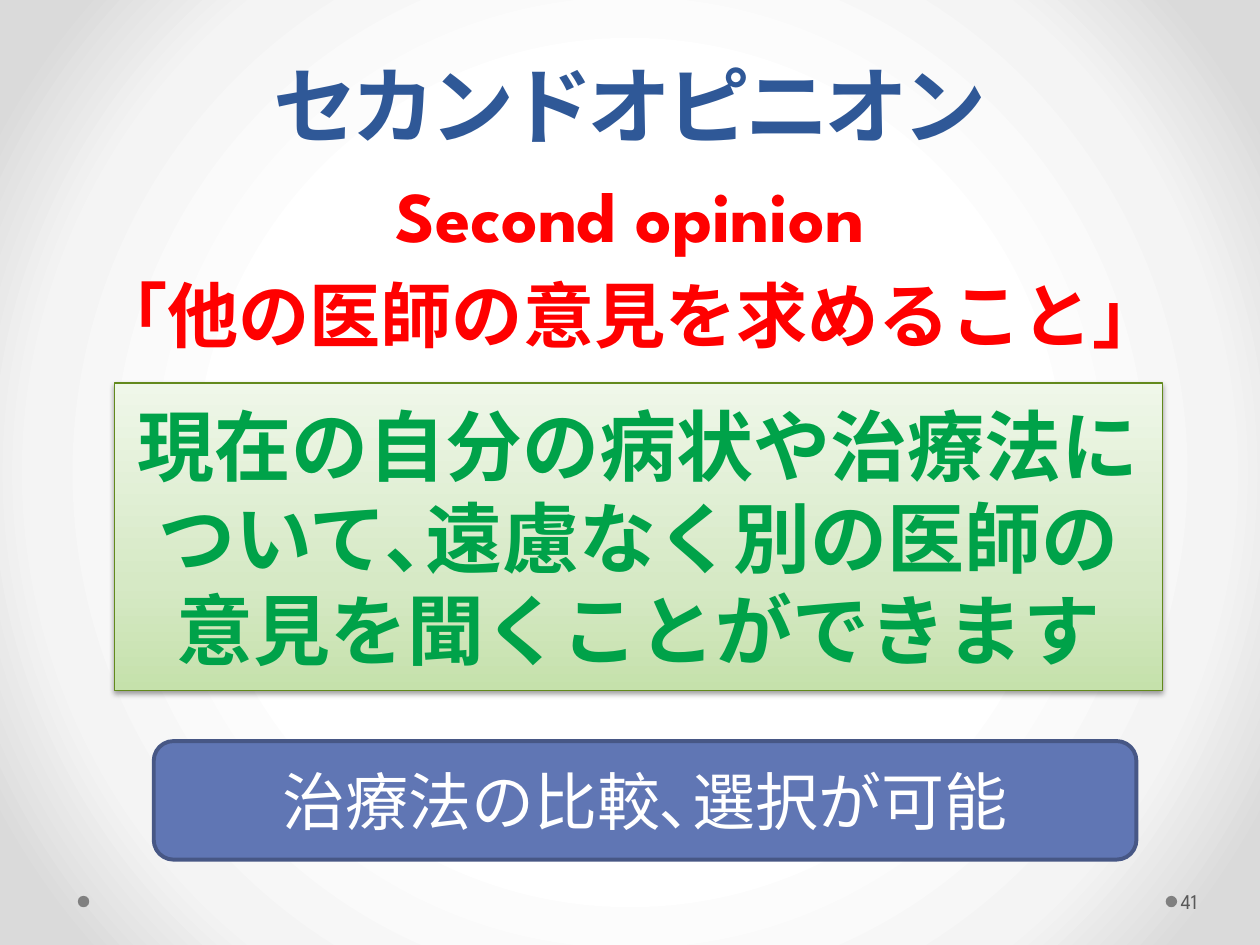
import pptx
import pptx.util
import pptx.dml.color
import pptx.enum.shapes
import pptx.enum.text
import pptx.oxml
import pptx.oxml.ns

Cm, Pt = pptx.util.Cm, pptx.util.Pt
SHAPES = pptx.enum.shapes.MSO_SHAPE
CENTER = pptx.enum.text.PP_ALIGN.CENTER
MIDDLE = pptx.enum.text.MSO_ANCHOR.MIDDLE
NS = pptx.oxml.ns.nsdecls("a")


def rgb(value):
    return pptx.dml.color.RGBColor.from_string(value)


def set_gradient(fill, properties, stops, direction):
    """Fill with (percent, colour) stops, spread as the direction XML says."""
    fill.gradient()
    gradient = properties.find(".//" + pptx.oxml.ns.qn("a:gradFill"))
    for child in list(gradient):
        gradient.remove(child)
    stop_xml = "".join(
        f'<a:gs pos="{percent * 1000}"><a:srgbClr val="{color}"/></a:gs>'
        for percent, color in stops)
    for xml in (f"<a:gsLst {NS}>{stop_xml}</a:gsLst>", direction):
        gradient.append(pptx.oxml.parse_xml(xml))


class SlideBuilder:
    latin = "League Spartan"
    japanese = "Vollkorn"

    def __init__(self, deck):
        self.slide = deck.slides.add_slide(deck.slide_layouts[1])

    def background(self, stops):
        circle = (f'<a:path {NS} path="circle"><a:fillToRect l="50000" t="50000" '
                  'r="50000" b="50000"/></a:path>')
        background = self.slide.background
        set_gradient(background.fill, self.slide.element, stops, circle)

    def place(self, shape, left, top, width, height):
        shape.left, shape.top = Cm(left), Cm(top)
        shape.width, shape.height = Cm(width), Cm(height)

    def set_text(self, shape, text, size, color, font, bold=False, align=CENTER):
        frame = shape.text_frame
        frame.word_wrap = True
        frame.auto_size = pptx.enum.text.MSO_AUTO_SIZE.NONE
        frame.text = text
        for paragraph in frame.paragraphs:
            paragraph.alignment = align
            for run in paragraph.runs:
                run.font.size, run.font.name, run.font.bold = Pt(size), font, bold
                run.font.color.rgb = rgb(color)
        return frame

    def title(self, box, text):
        heading = self.slide.shapes.title
        self.place(heading, *box)
        frame = self.set_text(heading, text, 48, "2F5897", self.japanese, bold=True)
        frame.vertical_anchor = MIDDLE
        paragraph = frame.paragraphs[0]
        paragraph.line_spacing = Pt(58)
        paragraph.runs[0]._r.get_or_add_rPr().set("spc", "-300")

    def body(self, box, lines):
        definition = self.slide.placeholders[1]
        self.place(definition, *box)
        frame = self.set_text(definition, "\n".join(lines), 40.7, "FF0000",
                              self.latin, bold=True)
        for paragraph in frame.paragraphs:
            paragraph.space_before = Pt(8)
            properties = paragraph._p.get_or_add_pPr()
            properties.set("marL", "0")
            properties.set("indent", "0")
            properties.append(pptx.oxml.parse_xml(f"<a:buNone {NS}/>"))

    def shape(self, kind, box, fill=None, line=None, line_width=0):
        shape = self.slide.shapes.add_shape(kind, *map(Cm, box))
        shape.shadow.inherit = False
        if fill:
            shape.fill.solid()
            shape.fill.fore_color.rgb = rgb(fill)
        if line:
            shape.line.color.rgb = rgb(line)
            shape.line.width = Pt(line_width)
        else:
            shape.line.fill.background()
        return shape

    def panel(self, box, text, stops):
        panel = self.shape(SHAPES.RECTANGLE, box, line="62891C", line_width=0.75)
        properties = panel._element.spPr
        set_gradient(panel.fill, properties, stops,
                     f'<a:lin {NS} ang="16200000" scaled="0"/>')
        effects = properties.find(pptx.oxml.ns.qn("a:effectLst"))
        effects.append(pptx.oxml.parse_xml(
            f'<a:outerShdw {NS} blurRad="{Pt(3.1)}" dist="{Pt(1.6)}" dir="5400000" '
            'rotWithShape="0"><a:srgbClr val="000000"><a:alpha val="38000"/>'
            '</a:srgbClr></a:outerShdw>'))
        frame = self.set_text(panel, text, 44, "00A249", self.japanese, bold=True)
        frame.vertical_anchor = MIDDLE

    def banner(self, box, text):
        banner = self.shape(SHAPES.ROUNDED_RECTANGLE, box, "6076B4", "475785", 2.25)
        frame = self.set_text(banner, text, 36, "FFFFFF", self.japanese)
        frame.vertical_anchor = MIDDLE

    def page_number(self, box, text):
        number = self.slide.shapes.add_textbox(*map(Cm, box))
        frame = self.set_text(number, text, 12, "595959", self.latin,
                              align=pptx.enum.text.PP_ALIGN.LEFT)
        frame.vertical_anchor = MIDDLE
        frame.margin_left = Cm(0.08)
        frame.margin_right = Cm(0.13)


def main():
    deck = pptx.Presentation()
    deck.slide_width, deck.slide_height = Cm(25.4), Cm(19.05)
    builder = SlideBuilder(deck)

    # Backdrop and footer dots
    builder.background([(50, "FFFFFF"), (76, "F4F4F4"), (92, "DADADA")])
    for dot_left in (23.5, 1.57):
        builder.shape(SHAPES.OVAL, (dot_left, 18.06, 0.23, 0.23), "808080")

    # Term and its meaning
    builder.title((1.27, 0.91, 22.86, 2.34), "セカンドオピニオン")
    builder.body((1.27, 3.33, 22.86, 4.29),
                 ["Second opinion", "「他の医師の意見を求めること」"])

    # Explanation and benefit
    builder.panel((2.31, 7.72, 21.13, 6.2),
                  "現在の自分の病状や治療法について､遠慮なく別の医師の意見を聞くことができます",
                  [(0, "C5E1AB"), (35, "D6E9C5"), (100, "EFF7E9")])
    builder.banner((3.1, 14.94, 19.81, 2.39), "治療法の比較､選択が可能")

    # Footer
    builder.page_number((23.72, 17.65, 1.55, 1.02), "41")
    deck.save("out.pptx")


if __name__ == "__main__":
    main()
